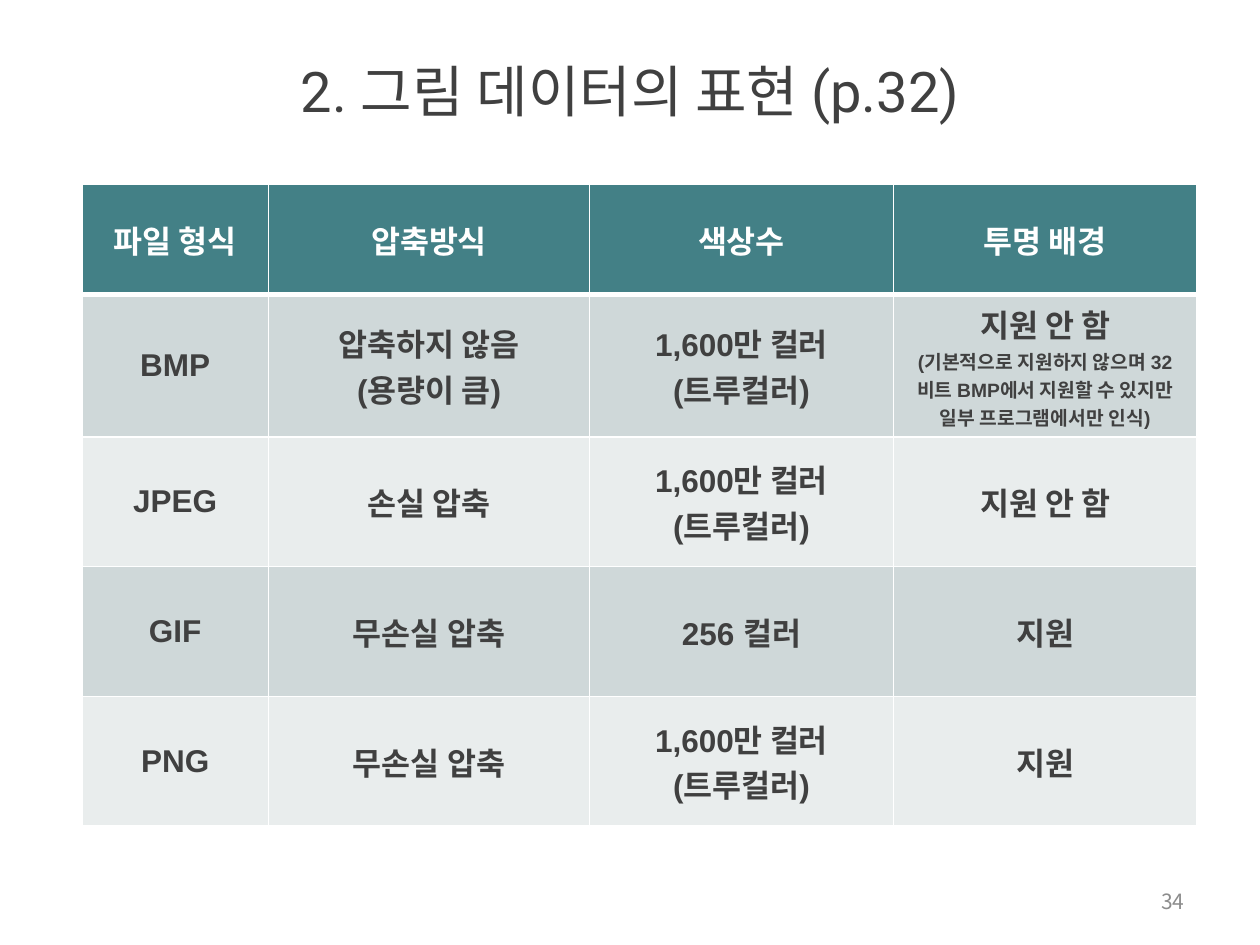
from lxml import etree
from pptx import Presentation
from pptx.dml.color import RGBColor
from pptx.enum.text import MSO_ANCHOR, PP_ALIGN
from pptx.oxml.ns import qn
from pptx.util import Inches, Pt

CENTER, RIGHT = PP_ALIGN.CENTER, PP_ALIGN.RIGHT
MIDDLE = MSO_ANCHOR.MIDDLE

WHITE = RGBColor(0xFF, 0xFF, 0xFF)
INK = RGBColor(0x40, 0x40, 0x40)
PAGE_GRAY = RGBColor(0x8C, 0x8C, 0x8C)
TEAL = RGBColor(0x43, 0x80, 0x86)
BANDS = (RGBColor(0xCF, 0xD8, 0xD9), RGBColor(0xE9, 0xED, 0xED))

KOREAN_FONT = "Noto Sans CJK KR"
COLUMN_WIDTHS = (1.48, 2.55, 2.41, 2.41)
HEADER_HEIGHT, FORMAT_HEIGHT = 0.88, 1.03
TEXT_SIZE, REMARK_SIZE = 18, 11

TRUE_COLOR = ("1,600만 컬러", "(트루컬러)")
BMP_REMARK = "(기본적으로 지원하지 않으며 32비트 BMP에서 지원할 수 있지만 일부 프로그램에서만 인식)"
HEADER = (("파일 형식",), ("압축방식",), ("색상수",), ("투명 배경",))
FORMATS = (
    (("BMP",), ("압축하지 않음", "(용량이 큼)"), TRUE_COLOR, ("지원 안 함", BMP_REMARK)),
    (("JPEG",), ("손실 압축",), TRUE_COLOR, ("지원 안 함",)),
    (("GIF",), ("무손실 압축",), ("256 컬러",), ("지원",)),
    (("PNG",), ("무손실 압축",), TRUE_COLOR, ("지원",)),
)


def add_run(paragraph, text, size, font_name, color, bold=False, align=CENTER):
    paragraph.alignment = align
    run = paragraph.add_run()
    run.text = text
    run.font.size = Pt(size)
    run.font.name = font_name
    run.font.bold = bold
    run.font.color.rgb = color
    east_asian = etree.SubElement(run.font._element, qn("a:ea"))
    east_asian.set("typeface", KOREAN_FONT)


def set_borders(cell, bottom_width):
    properties = cell._tc.get_or_add_tcPr()
    for side, width in (("L", 1), ("R", 1), ("T", 1), ("B", bottom_width)):
        line = etree.SubElement(properties, qn(f"a:ln{side}"), w=str(Pt(width)))
        fill = etree.SubElement(line, qn("a:solidFill"))
        etree.SubElement(fill, qn("a:srgbClr"), val=str(WHITE))


def fill_cell(cell, lines, background, color, bottom_width):
    set_borders(cell, bottom_width)
    cell.fill.solid()
    cell.fill.fore_color.rgb = background
    cell.vertical_anchor = MIDDLE
    frame = cell.text_frame
    for index, line in enumerate(lines):
        paragraph = frame.add_paragraph() if index else frame.paragraphs[0]
        size = REMARK_SIZE if line == BMP_REMARK else TEXT_SIZE
        add_run(paragraph, line, size, "Arial", color, bold=True)


def add_title(slide, text):
    title = slide.shapes.title
    title.left, title.top = Inches(0.5), Inches(0.36)
    title.width, title.height = Inches(9), Inches(0.71)
    title.text_frame.vertical_anchor = MIDDLE
    add_run(title.text_frame.paragraphs[0], text, 32, "Roboto", INK)


def add_format_table(slide):
    row_heights = [HEADER_HEIGHT] + [FORMAT_HEIGHT] * len(FORMATS)
    table = slide.shapes.add_table(
        len(row_heights), len(COLUMN_WIDTHS), Inches(0.65), Inches(1.46),
        Inches(sum(COLUMN_WIDTHS)), Inches(sum(row_heights)),
    ).table
    for column, width in zip(table.columns, COLUMN_WIDTHS):
        column.width = Inches(width)
    for row, height in zip(table.rows, row_heights):
        row.height = Inches(height)

    for cell, lines in zip(table.rows[0].cells, HEADER):
        fill_cell(cell, lines, TEAL, WHITE, bottom_width=3)
    for index, file_format in enumerate(FORMATS):
        band = BANDS[index % len(BANDS)]
        for cell, lines in zip(table.rows[index + 1].cells, file_format):
            fill_cell(cell, lines, band, INK, bottom_width=1)


def add_page_number(slide, number):
    box = slide.shapes.add_textbox(Inches(7.17), Inches(6.95), Inches(2.33), Inches(0.4))
    frame = box.text_frame
    frame.word_wrap = True
    frame.vertical_anchor = MIDDLE
    add_run(frame.paragraphs[0], number, 12, KOREAN_FONT, PAGE_GRAY, align=RIGHT)


def main():
    presentation = Presentation()
    presentation.slide_width, presentation.slide_height = Inches(10), Inches(7.5)
    slide = presentation.slides.add_slide(presentation.slide_layouts[5])
    add_title(slide, "2. 그림 데이터의 표현 (p.32)")
    add_format_table(slide)
    add_page_number(slide, "34")
    presentation.save("out.pptx")


if __name__ == "__main__":
    main()
